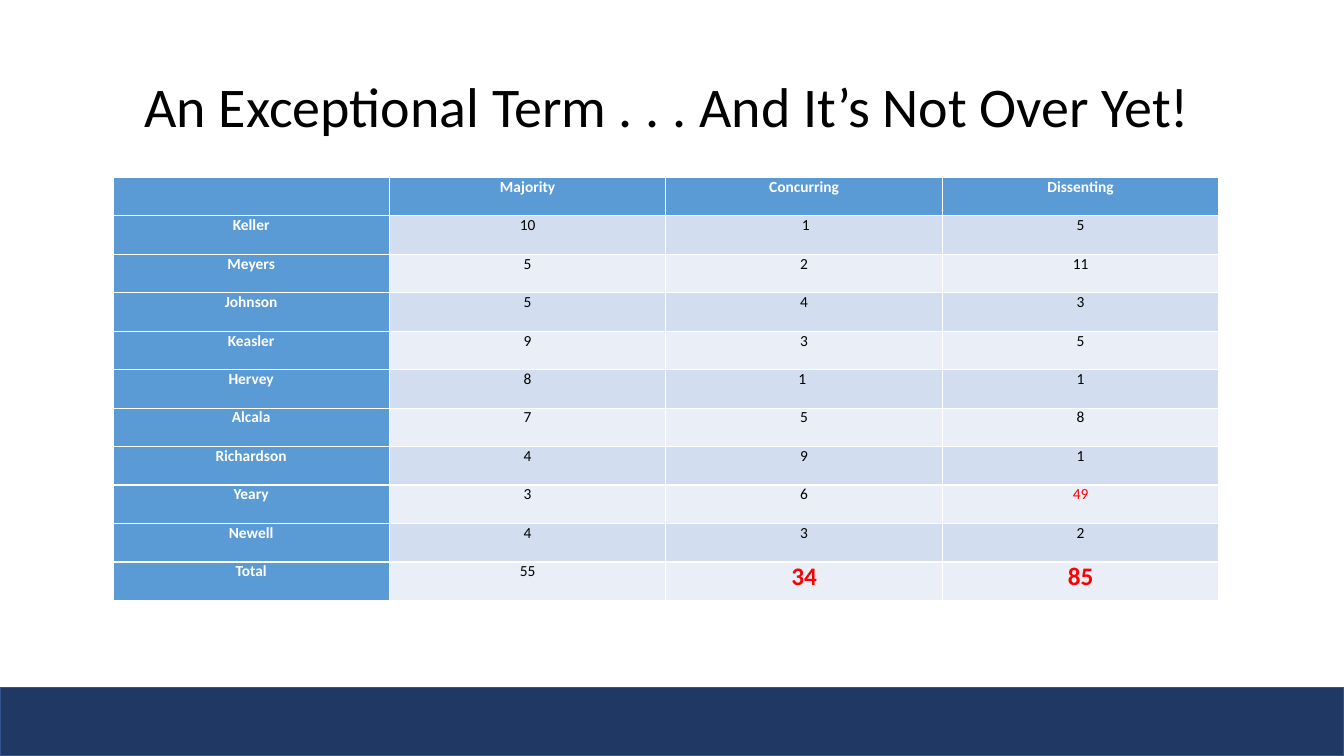
from dataclasses import dataclass

from pptx import Presentation
from pptx.dml.color import RGBColor
from pptx.enum.shapes import MSO_SHAPE
from pptx.enum.text import MSO_ANCHOR, PP_ALIGN
from pptx.util import Inches, Pt

RECT = MSO_SHAPE.RECTANGLE
CENTER = PP_ALIGN.CENTER
MIDDLE = MSO_ANCHOR.MIDDLE
TITLE_ONLY = 5

WHITE = RGBColor(0xFF, 0xFF, 0xFF)
BLACK = RGBColor(0x00, 0x00, 0x00)
RED = RGBColor(0xFF, 0x00, 0x00)
NAVY = RGBColor(0x20, 0x38, 0x64)
NAVY_LINE = RGBColor(0x32, 0x54, 0x91)
BLUE = RGBColor(0x5B, 0x9B, 0xD5)
BANDS = (RGBColor(0xD2, 0xDE, 0xEF), RGBColor(0xEA, 0xEF, 0xF7))

FONT = "Calibri"


@dataclass(frozen=True)
class TextFormat:
    size: int = 11
    bold: bool = False
    color: RGBColor = BLACK


TITLE = TextFormat(size=40)
HEADING = TextFormat(bold=True, color=WHITE)
COUNT = TextFormat()
HIGH_COUNT = TextFormat(color=RED)
HIGH_TOTAL = TextFormat(size=18, bold=True, color=RED)

OPINIONS = [
    ("", "Majority", "Concurring", "Dissenting"),
    ("Keller", "10", " 1", "5"),
    ("Meyers", "5", "2", "11"),
    ("Johnson", "5", "4", "3"),
    ("Keasler", "9", "3", "5"),
    ("Hervey", "8", "1 ", "1"),
    ("Alcala", "7", "5", "8"),
    ("Richardson", "4", "9", "1"),
    ("Yeary", "3", "6", "49"),
    ("Newell", "4", "3", "2"),
    ("Total", "55", "34", "85"),
]
HIGHLIGHTS = {"49": HIGH_COUNT, "34": HIGH_TOTAL, "85": HIGH_TOTAL}
CELL_MARGINS = {
    "margin_left": Inches(0.07),
    "margin_right": Inches(0.07),
    "margin_top": 0,
    "margin_bottom": 0,
}


def write_text(tf, text: str, fmt: TextFormat) -> None:
    p = tf.paragraphs[0]
    p.alignment = CENTER
    if not text:
        return
    r = p.add_run()
    r.text = text
    for name, value in {"name": FONT, "size": Pt(fmt.size), "bold": fmt.bold}.items():
        setattr(r.font, name, value)
    r.font.color.rgb = fmt.color


def add_band(s) -> None:
    sp = s.shapes.add_shape(RECT, 0, Inches(6.82), Inches(13.33), Inches(0.68))
    sp.shadow.inherit = False
    sp.fill.solid()
    sp.fill.fore_color.rgb = NAVY
    sp.line.color.rgb = NAVY_LINE
    sp.line.width = Pt(1)


def add_title(s, text: str) -> None:
    sp = s.shapes.title
    sp.left, sp.top = Inches(1.14), Inches(0.66)
    sp.width, sp.height = Inches(10.95), Inches(0.77)
    sp.text_frame.word_wrap = True
    sp.text_frame.vertical_anchor = MIDDLE
    write_text(sp.text_frame, text, TITLE)


def add_opinion_table(s) -> None:
    table = s.shapes.add_table(
        len(OPINIONS), len(OPINIONS[0]),
        Inches(1.12), Inches(1.76), Inches(10.97), Inches(4.2),
    ).table
    table.first_col = True
    for i, row in enumerate(OPINIONS):
        for j, text in enumerate(row):
            cell = table.cell(i, j)
            for name, value in CELL_MARGINS.items():
                setattr(cell, name, value)
            is_heading = i == 0 or j == 0
            cell.fill.solid()
            cell.fill.fore_color.rgb = BLUE if is_heading else BANDS[(i - 1) % 2]
            fmt = HEADING if is_heading else HIGHLIGHTS.get(text, COUNT)
            write_text(cell.text_frame, text, fmt)


def main() -> None:
    prs = Presentation()
    prs.slide_width, prs.slide_height = Inches(13.33), Inches(7.5)
    s = prs.slides.add_slide(prs.slide_layouts[TITLE_ONLY])

    # Footer band
    add_band(s)

    # Title
    add_title(s, "An Exceptional Term . . . And It’s Not Over Yet!")

    # Opinions by judge
    add_opinion_table(s)

    prs.save("out.pptx")


if __name__ == "__main__":
    main()
